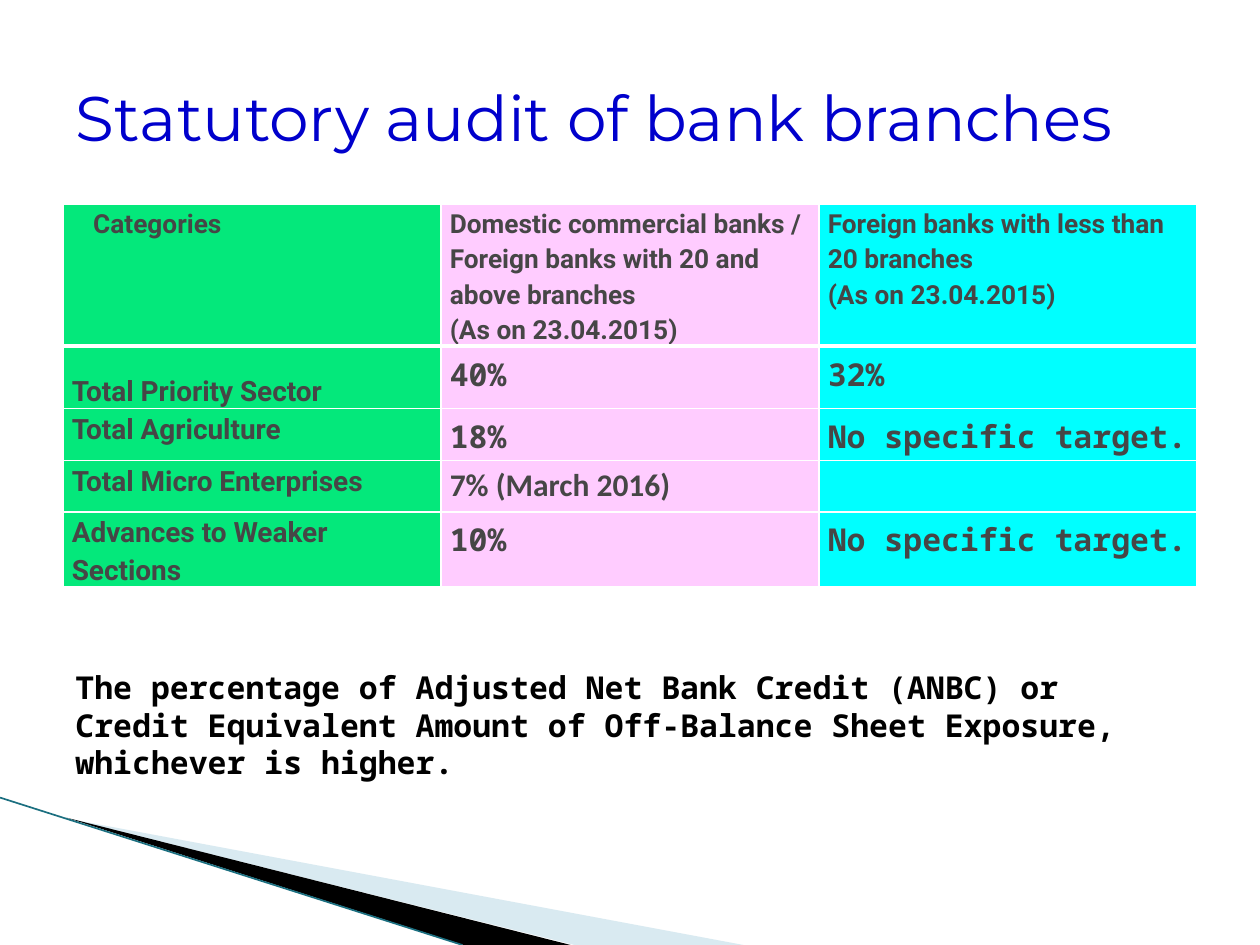
from lxml import etree
from pptx import Presentation
from pptx.dml.color import RGBColor
from pptx.enum.shapes import MSO_CONNECTOR
from pptx.enum.text import MSO_ANCHOR, MSO_AUTO_SIZE, PP_ALIGN
from pptx.oxml import parse_xml
from pptx.oxml.ns import nsdecls, qn
from pptx.util import Inches, Pt

LINE = MSO_CONNECTOR.STRAIGHT
MID = MSO_ANCHOR.MIDDLE
LEFT = PP_ALIGN.LEFT
FIXED, GROW = MSO_AUTO_SIZE.NONE, MSO_AUTO_SIZE.SHAPE_TO_FIT_TEXT

HUES = {
    "title": "0000CC", "body": "464646", "note": "000000", "rule": "FFFFFF",
    "green": "04E87B", "pink": "FFCCFF", "cyan": "00FFFF",
    "pale": "A0CBDC", "black": "000000", "teal": "1B6F80",
}
FONTS = {
    "title": {"name": "Montserrat", "size": Pt(36), "bold": False},
    "head": {"name": "Roboto", "size": Pt(15), "bold": True},
    "label": {"name": "Roboto", "size": Pt(16), "bold": True},
    "value": {"name": "Noto Sans Mono", "size": Pt(18), "bold": True},
    "month": {"name": "Calibri", "size": Pt(18), "bold": True},
}
COLS = ["green", "pink", "cyan"]
DATE = "(As on 23.04.2015)"
ROWS = [
    ["Categories",
     "Domestic commercial banks / Foreign banks with 20 and above branches\n" + DATE,
     "Foreign banks with less than 20 branches\n" + DATE],
    ["Total Priority Sector", "40%", "32%"],
    ["Total Agriculture", "18%", "No specific target."],
    ["Total Micro Enterprises", "7% (March 2016)", ""],
    ["Advances to Weaker Sections", "10%", "No specific target."],
]
NOTE = ("The percentage of Adjusted Net Bank Credit (ANBC) or Credit Equivalent "
        "Amount of Off-Balance Sheet Exposure, whichever is higher.")


class Deck:
    def __init__(self):
        self.prs = Presentation()
        self.prs.slide_width, self.prs.slide_height = Inches(10), Inches(7.5)
        self.slide = self.prs.slides.add_slide(self.prs.slide_layouts[5])
        self.shapes = self.slide.shapes

    def hue(self, name):
        return RGBColor.from_string(HUES[name])

    def words(self, frame, text, font, hue, **form):
        frame.text = text
        frame.word_wrap = True
        for para in frame.paragraphs:
            for key, val in form.items():
                setattr(para, key, val)
            for item in [para.font] + [run.font for run in para.runs]:
                for key, val in FONTS[font].items():
                    setattr(item, key, val)
                item.color.rgb = self.hue(hue)

    def title(self, text, box):
        shape = self.shapes.title
        for key, val in zip(("left", "top", "width", "height"), box):
            setattr(shape, key, Inches(val))
        frame = shape.text_frame
        self.words(frame, text, "title", "title", alignment=LEFT)
        frame.auto_size, frame.vertical_anchor = FIXED, MID

    def note(self, text, box):
        frame = self.shapes.add_textbox(*map(Inches, box)).text_frame
        self.words(frame, text, "value", "note")
        frame.auto_size = GROW

    def wedge(self, points, hue, alpha=100):
        first, *rest = [tuple(map(Inches, point)) for point in points]
        pen = self.shapes.build_freeform(*first)
        pen.add_line_segments(rest, close=True)
        shape = pen.convert_to_shape()
        shape.shadow.inherit = False
        shape.fill.solid()
        shape.fill.fore_color.rgb = self.hue(hue)
        shape.line.fill.background()
        if alpha < 100:
            color = shape._element.spPr.find(".//" + qn("a:srgbClr"))
            etree.SubElement(color, qn("a:alpha"), val=str(alpha * 1000))

    def line(self, start, end, hue, width):
        rule = self.shapes.add_connector(LINE, *map(Inches, start + end))
        rule.line.color.rgb = self.hue(hue)
        rule.line.width = Pt(width)
        etree.SubElement(rule._element.spPr, qn("a:effectLst"))

    def edges(self, cell, row):
        props = cell._tc.get_or_add_tcPr()
        thick = {"T": 3 if row == 1 else 1, "B": 3 if row == 0 else 1}
        for spot, side in enumerate("LRTB"):
            props.insert(spot, parse_xml(
                f'<a:ln{side} {nsdecls("a")} w="{Pt(thick.get(side, 1))}">'
                f'<a:solidFill><a:srgbClr val="{HUES["rule"]}"/></a:solidFill>'
                f'</a:ln{side}>'))

    def table(self, rows, box, high):
        frame = self.shapes.add_table(len(rows), len(COLS), *map(Inches, box))
        grid = frame.table
        grid.horz_banding = False
        for row, texts in enumerate(rows):
            grid.rows[row].height = Inches(high)
            for col, text in enumerate(texts):
                cell = grid.cell(row, col)
                pad = {"left": 0.24 if row == col == 0 else 0.07, "right": 0.07,
                       "top": 0.2 if (row, col) == (1, 0) else 0, "bottom": 0}
                for side, gap in pad.items():
                    setattr(cell, "margin_" + side, Inches(gap))
                font = "head" if row == 0 else "label" if col == 0 else "value"
                if "March" in text:
                    font = "month"
                self.words(cell.text_frame, text, font, "body", line_spacing=1.15)
                cell.fill.solid()
                cell.fill.fore_color.rgb = self.hue(COLS[col])
                self.edges(cell, row)
        frame.height = Inches(box[3])


def main():
    deck = Deck()
    deck.wedge([(0.55, 6.5), (5.9, 7.5), (4.56, 7.5)], "pale", 40)
    deck.wedge([(0.53, 6.49), (4.53, 7.5), (3.68, 7.5)], "black")
    deck.line((0, 6.33), (3.67, 7.5), "teal", 0.95)
    deck.table(ROWS, (0.5, 1.62, 9, 3.38), 0.41)
    deck.title("Statutory audit of bank branches", (0.5, 0.3, 9, 1.25))
    deck.note(NOTE, (0.5, 5.25, 8.92, 0.71))
    deck.prs.save("out.pptx")


if __name__ == "__main__":
    main()
